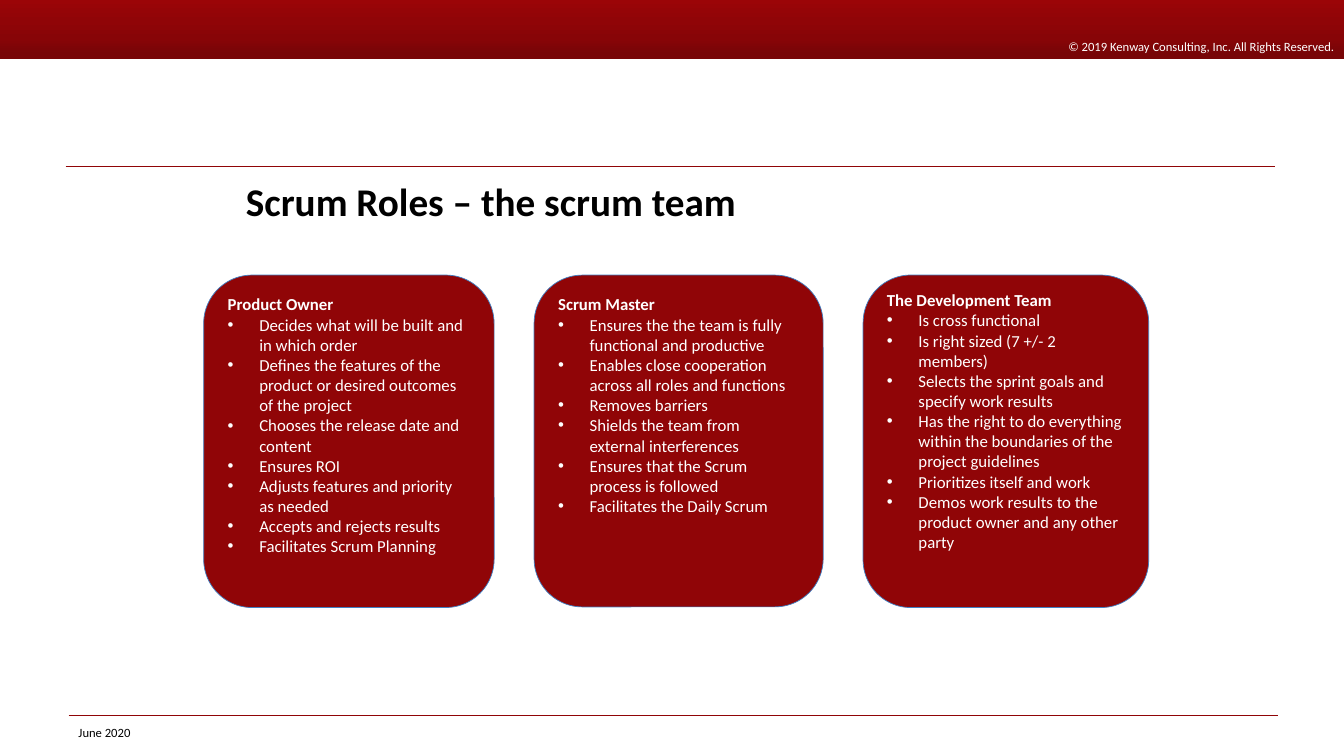
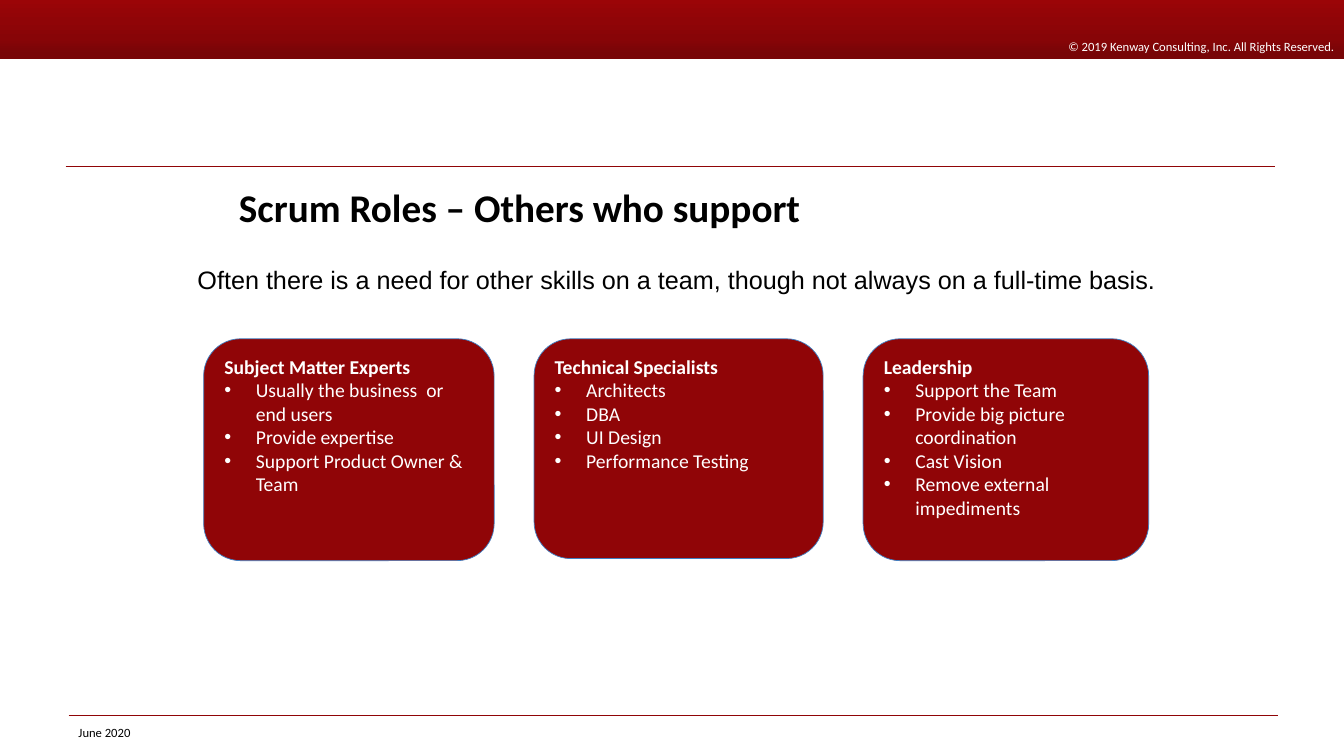
from dataclasses import dataclass
from itertools import accumulate

from lxml.etree import SubElement
from pptx import Presentation
from pptx.dml.color import RGBColor
from pptx.enum.shapes import MSO_CONNECTOR as Connector, MSO_SHAPE as Shape
from pptx.enum.text import MSO_ANCHOR as Anchor, PP_ALIGN as Align
from pptx.oxml.ns import qn
from pptx.util import Pt

COPYRIGHT = "© 2019 Kenway Consulting, Inc. All Rights Reserved."
DATE = "June 2020"

SLIDES = [
    {
        "title": "Scrum Roles – the scrum team",
        "title_at": (168.5, 90.5),
        "intro": None,
        "size": 12,
        "cards_top": 196.5,
        "card_heights": (237.5, 237, 237.5),
        "cards": [
            ("Product Owner", 1.0, [
                "Decides what will be built and in which order",
                "Defines the features of the product or desired outcomes of the project",
                "Chooses the release date and content",
                "Ensures ROI",
                "Adjusts features and priority as needed",
                "Accepts and rejects results",
                "Facilitates Scrum Planning",
            ]),
            ("Scrum Master", 1.0, [
                "Ensures the the team is fully functional and productive",
                "Enables close cooperation across all roles and functions",
                "Removes barriers",
                "Shields the team from external interferences",
                "Ensures that the Scrum process is followed",
                "Facilitates the Daily Scrum",
            ]),
            ("The Development Team", 0.8, [
                "Is cross functional",
                "Is right sized (7 +/- 2 members)",
                "Selects the sprint goals and specify work results",
                "Has the right to do everything within the boundaries of the project guidelines",
                "Prioritizes itself and work",
                "Demos work results to the product owner and any other party",
            ]),
        ],
    },
    {
        "title": "Scrum Roles – Others who support",
        "title_at": (163.5, 94.5),
        "intro": "Often there is a need for other skills on a team, "
                 "though not always on a full-time basis.",
        "size": 14,
        "cards_top": 242,
        "card_heights": (158.5, 157, 158.5),
        "cards": [
            ("Subject Matter Experts", 1.0, [
                "Usually the business  or end users",
                "Provide expertise",
                "Support Product Owner & Team",
            ]),
            ("Technical Specialists", 1.0, [
                "Architects",
                "DBA",
                "UI Design",
                "Performance Testing",
            ]),
            ("Leadership", 1.0, [
                "Support the Team",
                "Provide big picture coordination",
                "Cast Vision",
                "Remove external impediments",
            ]),
        ],
    },
]


@dataclass(frozen=True)
class Theme:
    red: str = "900507"
    outline: str = "407FC2"
    black: str = "000000"
    white: str = "FFFFFF"
    band: tuple = ((0, "9B0507"), (35, "900507"), (65, "870507"), (91, "780507"))
    font: str = "Calibri"
    intro_font: str = "Arial"
    title_size: float = 28
    intro_size: float = 18
    small_size: float = 9
    hairline: float = 0.5


THEME = Theme()
SLIDE_SIZE = (960, 540)
BAND_HEIGHT = 42.5
RULES = ((46.8, 118.8), (49, 511.2))
RULE_LENGTH = 864
TITLE_SIZE = (574, 74)
INTRO_BOX = (134, 185, 714, 29)
DATE_BOX = (49, 514, 216, 20)
CARDS_LEFT = 145.5
CARD_GAP = 28.5
CARD_WIDTHS = (207.5, 206.5, 204)
BULLET_INDENT = 22.5


def assign(target, values):
    for name, value in values.items():
        setattr(target, name, value)


def points(*lengths):
    return [Pt(length) for length in lengths]


def write(paragraph, text, size, color, font=THEME.font, bold=False, **layout):
    assign(paragraph, {"alignment": Align.LEFT, **layout})
    run = paragraph.add_run()
    run.text = text
    assign(run.font, {"name": font, "size": Pt(size), "bold": bold})
    run.font.color.rgb = RGBColor.from_string(color)


def add_bullet(paragraph):
    properties = paragraph._p.get_or_add_pPr()
    properties.set("marL", str(Pt(BULLET_INDENT)))
    properties.set("indent", str(-Pt(BULLET_INDENT)))
    SubElement(properties, qn("a:buFont"), typeface="Arial")
    SubElement(properties, qn("a:buChar"), char="•")


def add_text(slide, box, text, size, font=THEME.font):
    frame = slide.shapes.add_textbox(*points(*box)).text_frame
    frame.word_wrap = True
    write(frame.paragraphs[0], text, size, THEME.black, font)


def add_rule(slide, left, top):
    rule = slide.shapes.add_connector(
        Connector.STRAIGHT, *points(left, top, left + RULE_LENGTH, top))
    rule.line.color.rgb = RGBColor.from_string(THEME.red)
    rule.line.width = Pt(THEME.hairline)
    SubElement(rule.element.spPr, qn("a:effectLst"))
    return rule


def add_band(slide):
    band = slide.shapes.add_shape(
        Shape.RECTANGLE, *points(0, 0, SLIDE_SIZE[0], BAND_HEIGHT))
    band.shadow.inherit = False
    band.line.fill.background()
    band.fill.gradient()
    band.fill.gradient_angle = 270
    stops = band.element.spPr.find(qn("a:gradFill")).find(qn("a:gsLst"))
    for stop in list(stops):
        stops.remove(stop)
    for percent, color in THEME.band:
        stop = SubElement(stops, qn("a:gs"), pos=str(percent * 1000))
        SubElement(stop, qn("a:srgbClr"), val=color)
    band.text_frame.vertical_anchor = Anchor.BOTTOM
    write(band.text_frame.paragraphs[0], COPYRIGHT, THEME.small_size,
          THEME.white, alignment=Align.RIGHT)
    return band


def furnish_layout(layout, slide):
    for placeholder in list(layout.placeholders):
        if placeholder.placeholder_format.idx:
            layout.shapes.element.remove(placeholder.element)
    furniture = [add_band(slide)] + [add_rule(slide, *start) for start in RULES]
    for shape in furniture:
        layout.shapes.element.append(shape.element)


def add_card(slide, box, size, heading, heading_spacing, items):
    card = slide.shapes.add_shape(Shape.ROUNDED_RECTANGLE, *points(*box))
    card.shadow.inherit = False
    card.fill.solid()
    card.fill.fore_color.rgb = RGBColor.from_string(THEME.red)
    card.line.color.rgb = RGBColor.from_string(THEME.outline)
    card.line.width = Pt(THEME.hairline)
    frame = card.text_frame
    assign(frame, {"word_wrap": True, "vertical_anchor": Anchor.TOP})
    write(frame.paragraphs[0], heading, size, THEME.white, bold=True,
          line_spacing=heading_spacing)
    for item in items:
        paragraph = frame.add_paragraph()
        add_bullet(paragraph)
        write(paragraph, item, size, THEME.white)


def fill_slide(slide, content):
    title = slide.shapes.title
    box = points(*content["title_at"], *TITLE_SIZE)
    assign(title, dict(zip(("left", "top", "width", "height"), box)))
    title.text_frame.vertical_anchor = Anchor.BOTTOM
    write(title.text_frame.paragraphs[0], content["title"], THEME.title_size,
          THEME.black, bold=True, line_spacing=0.9)
    if content["intro"]:
        add_text(slide, INTRO_BOX, content["intro"], THEME.intro_size,
                 THEME.intro_font)
    lefts = accumulate((width + CARD_GAP for width in CARD_WIDTHS[:-1]),
                       initial=CARDS_LEFT)
    for left, width, height, card in zip(
            lefts, CARD_WIDTHS, content["card_heights"], content["cards"]):
        add_card(slide, (left, content["cards_top"], width, height),
                 content["size"], *card)
    add_text(slide, DATE_BOX, DATE, THEME.small_size)


def main():
    presentation = Presentation()
    width, height = points(*SLIDE_SIZE)
    assign(presentation, {"slide_width": width, "slide_height": height})
    layout = presentation.slide_layouts.get_by_name("Title Only")
    slides = [presentation.slides.add_slide(layout) for _ in SLIDES]
    furnish_layout(layout, slides[0])
    for slide, content in zip(slides, SLIDES):
        fill_slide(slide, content)
    presentation.save("out.pptx")


if __name__ == "__main__":
    main()
